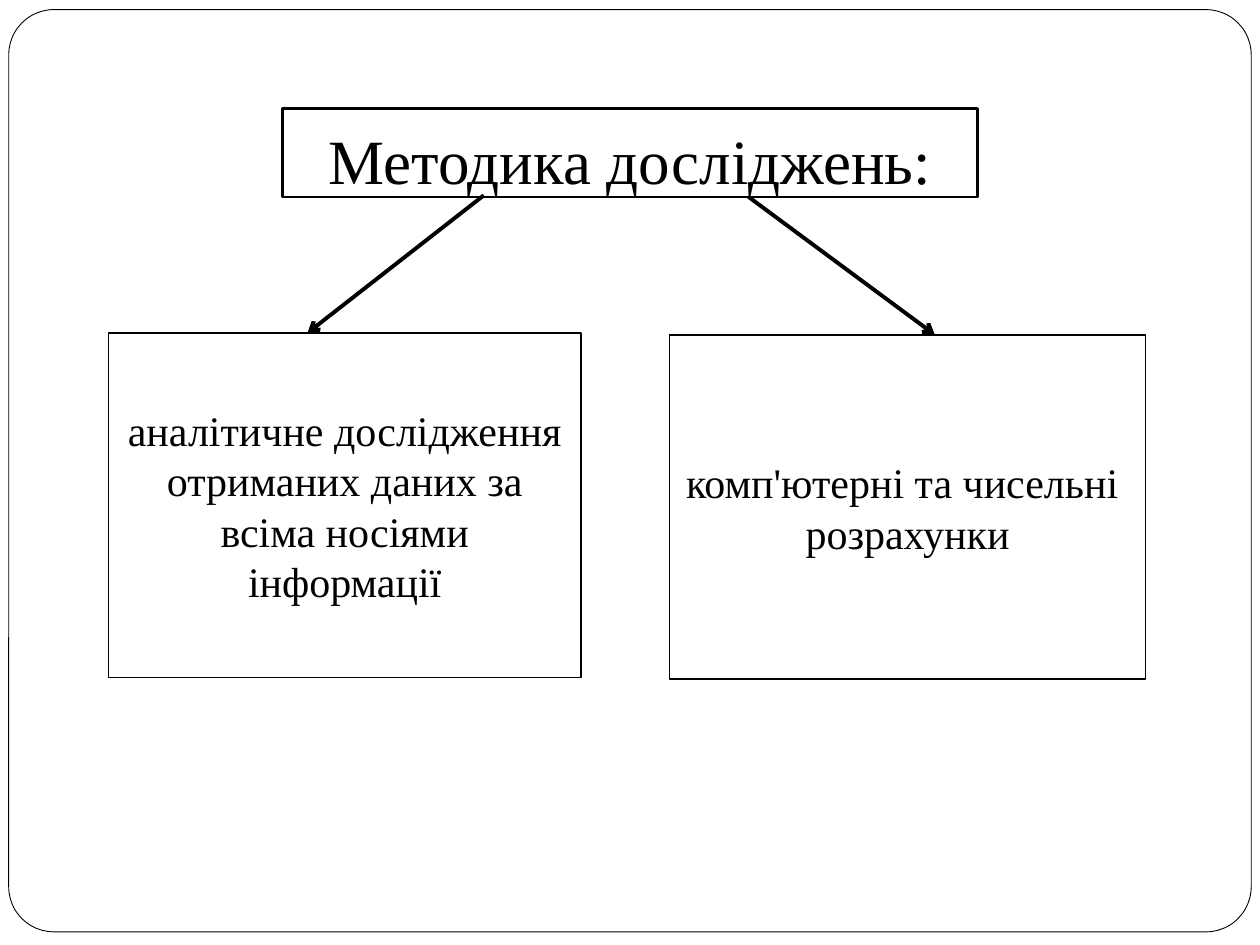
from dataclasses import dataclass

from lxml.etree import SubElement
from pptx import Presentation
from pptx.dml.color import RGBColor
from pptx.enum.shapes import MSO_CONNECTOR, MSO_SHAPE
from pptx.enum.text import MSO_ANCHOR, MSO_AUTO_SIZE, PP_ALIGN
from pptx.oxml.ns import qn
from pptx.util import Pt


@dataclass(frozen=True)
class Theme:
    ink: RGBColor = RGBColor(0, 0, 0)
    paper: RGBColor = RGBColor(255, 255, 255)
    font: str = "Times New Roman"
    title_size: float = 36
    body_size: float = 24


class SlideBuilder:
    def __init__(self, page, theme):
        self.page = page
        self.theme = theme

    def outline(self, shape, width):
        shape.line.color.rgb = self.theme.ink
        shape.line.width = Pt(width)

    def set_text(self, shape, lines, size, **frame_format):
        """Fill a shape with one centred paragraph, broken into lines."""
        frame = shape.text_frame
        settings = {"word_wrap": True, "auto_size": MSO_AUTO_SIZE.NONE, **frame_format}
        for name, value in settings.items():
            setattr(frame, name, value)
        para = frame.paragraphs[0]
        para.alignment = PP_ALIGN.CENTER
        for index, line in enumerate(lines):
            if index:
                para.add_line_break()
            span = para.add_run()
            span.text = line
            for name, value in {"name": self.theme.font, "size": Pt(size)}.items():
                setattr(span.font, name, value)
            span.font.color.rgb = self.theme.ink

    def title(self, text, left, top, width, height):
        box = self.page.shapes.title
        place = {"left": left, "top": top, "width": width, "height": height}
        for name, value in place.items():
            setattr(box, name, Pt(value))
        self.outline(box, 1.5)
        self.set_text(box, [text], self.theme.title_size, vertical_anchor=MSO_ANCHOR.TOP,
                      margin_top=Pt(7.5), margin_bottom=Pt(0))

    def shape(self, kind, left, top, width, height, line_width):
        box = self.page.shapes.add_shape(kind, Pt(left), Pt(top), Pt(width), Pt(height))
        box.shadow.inherit = False
        self.outline(box, line_width)
        return box

    def frame(self, left, top, width, height, rounding):
        border = self.shape(MSO_SHAPE.ROUNDED_RECTANGLE, left, top, width, height, 0.5)
        border.adjustments[0] = rounding
        border.fill.solid()
        border.fill.fore_color.rgb = self.theme.paper
        # The frame lies behind the title
        self.page.shapes.title.element.addprevious(border.element)

    def method_box(self, lines, left, top, width, height):
        box = self.shape(MSO_SHAPE.RECTANGLE, left, top, width, height, 1)
        box.fill.background()
        self.set_text(box, lines, self.theme.body_size, vertical_anchor=MSO_ANCHOR.MIDDLE)

    def arrow(self, start, end):
        points = [Pt(value) for value in (*start, *end)]
        arrow = self.page.shapes.add_connector(MSO_CONNECTOR.STRAIGHT, *points)
        self.outline(arrow, 2.25)
        properties = arrow.element.spPr
        SubElement(properties.find(qn("a:ln")), qn("a:tailEnd"), type="arrow")
        SubElement(properties, qn("a:effectLst"))


def main():
    deck = Presentation()
    deck.slide_width, deck.slide_height = Pt(720), Pt(540)
    page = deck.slides.add_slide(deck.slide_layouts[5])
    builder = SlideBuilder(page, Theme())

    # Page frame and heading
    builder.frame(5, 5.5, 710, 527, 0.049)
    builder.title("Методика досліджень:", 161.5, 62, 397, 50.5)

    # Research methods
    builder.method_box(
        ["аналітичне дослідження отриманих даних за всіма носіями інформації"],
        62, 190.3, 270, 196.8)
    builder.method_box(["комп'ютерні та чисельні ", "розрахунки"], 382.6, 191.3, 272, 196.8)

    # Arrows from the heading to the methods
    builder.arrow((276.5, 111.6), (175.7, 190.3))
    builder.arrow((427.7, 112.5), (534.2, 191.3))

    deck.save("out.pptx")


if __name__ == "__main__":
    main()
